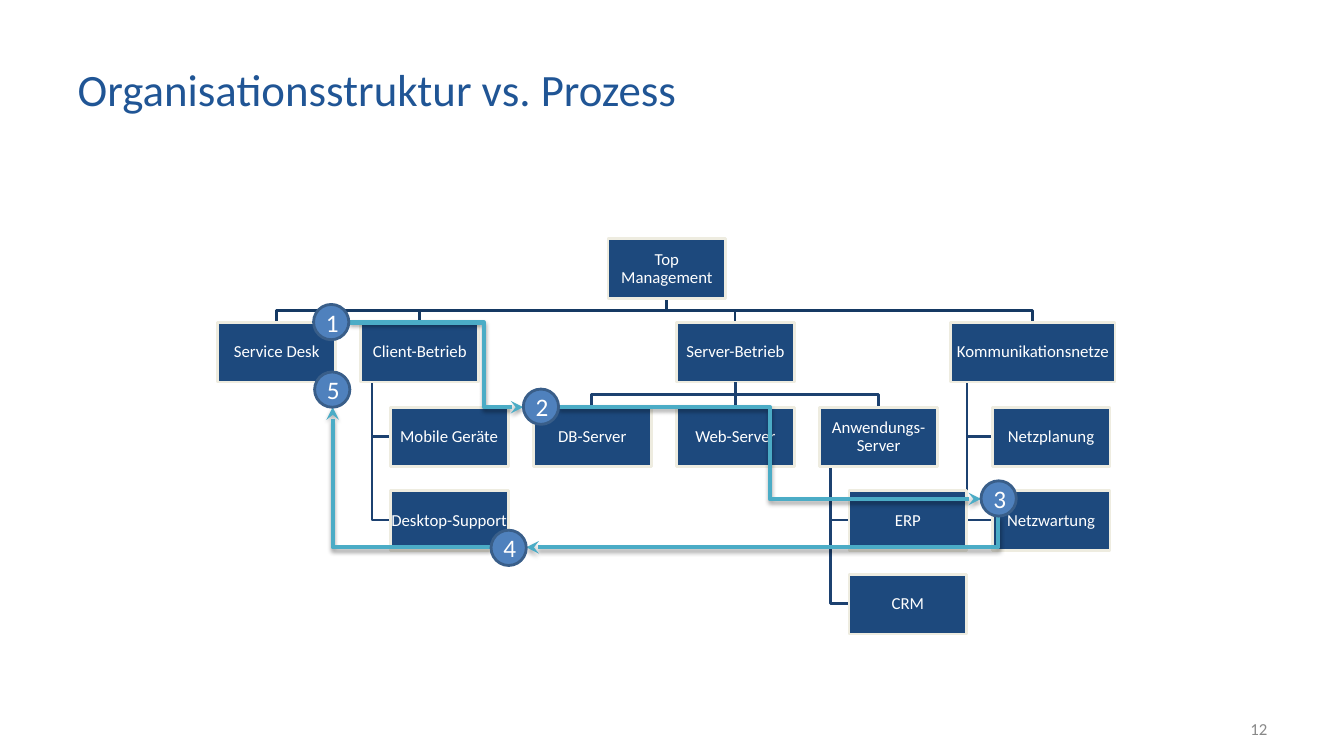
from dataclasses import dataclass

from lxml import etree
from pptx import Presentation
from pptx.dml.color import RGBColor
from pptx.enum.shapes import MSO_CONNECTOR, MSO_SHAPE
from pptx.enum.text import MSO_ANCHOR, MSO_AUTO_SIZE, PP_ALIGN
from pptx.oxml import parse_xml
from pptx.oxml.ns import nsdecls, qn
from pptx.util import Pt

PX = 9144
ELBOW, STRAIGHT = MSO_CONNECTOR.ELBOW, MSO_CONNECTOR.STRAIGHT
RECTANGLE, CIRCLE = MSO_SHAPE.RECTANGLE, MSO_SHAPE.FLOWCHART_CONNECTOR
LEFT, CENTER, RIGHT = PP_ALIGN.LEFT, PP_ALIGN.CENTER, PP_ALIGN.RIGHT
MIDDLE, NO_FIT = MSO_ANCHOR.MIDDLE, MSO_AUTO_SIZE.NONE
BOTTOM_SITE, TOP_SITE = 2, 0

BOX_WIDTH, BOX_HEIGHT, CHART_TOP, DOT = 117, 59, 237, 35

UNITS = {
    "Top Management": (603, 0, None),
    "Service Desk": (216, 1, "Top Management"),
    "Client-Betrieb": (358, 1, "Top Management"),
    "Mobile Geräte": (387, 2, "Client-Betrieb"),
    "Desktop-Support": (387, 3, "Client-Betrieb"),
    "Server-Betrieb": (671, 1, "Top Management"),
    "DB-Server": (529, 2, "Server-Betrieb"),
    "Web-Server": (671, 2, "Server-Betrieb"),
    "Anwendungs-Server": (813, 2, "Server-Betrieb"),
    "ERP": (842, 3, "Anwendungs-Server"),
    "CRM": (842, 4, "Anwendungs-Server"),
    "Kommunikationsnetze": (943, 1, "Top Management"),
    "Netzplanung": (984, 2, "Kommunikationsnetze"),
    "Netzwartung": (984, 3, "Kommunikationsnetze"),
}
WIDE_UNITS = {"Kommunikationsnetze": 163}
SPREADING = ("Top Management", "Server-Betrieb")

STEPS = [(311, 302), (519, 386), (973, 477), (487, 526), (312, 369)]
ARROWS = [
    ((347, 320), (519, 404), 0, 77500),
    ((554, 404), (973, 495), 0, 50000),
    ((990, 512), (522, 543), 90, None),
    ((487, 543), (330, 404), 180, None),
]


@dataclass(frozen=True)
class Theme:
    """Colours, font and type sizes of the slide."""
    font: str = "Calibri"
    title: str = "205595"
    number: str = "888888"
    box: str = "1D497D"
    box_edge: str = "EEECE0"
    top_link: str = "153963"
    link: str = "1C4170"
    dot: str = "4F81BD"
    dot_edge: str = "395E89"
    arrow: str = "4BACC6"
    white: str = "FFFFFF"
    title_size: int = 32
    step_size: int = 18
    small_size: int = 12


class SlideBuilder:
    """Draws styled elements on the current slide."""

    def __init__(self, page, theme):
        self.page = page
        self.theme = theme

    def set_text(self, shape, text, size, color, align, inset=(10, 5), spacing=1.0):
        """Fill a shape with one formatted paragraph."""
        frame = shape.text_frame
        across, down = (value * PX for value in inset)
        settings = {"word_wrap": True, "auto_size": NO_FIT, "vertical_anchor": MIDDLE,
                    "margin_left": across, "margin_right": across,
                    "margin_top": down, "margin_bottom": down}
        for name, value in settings.items():
            setattr(frame, name, value)
        para = frame.paragraphs[0]
        para.alignment, para.line_spacing = align, spacing
        span = para.add_run()
        span.text = text
        for name, value in {"name": self.theme.font, "size": Pt(size)}.items():
            setattr(span.font, name, value)
        span.font.color.rgb = RGBColor.from_string(color)

    def stroke(self, line, color, width):
        """Set the colour and the width in points of a line."""
        line.color.rgb = RGBColor.from_string(color)
        line.width = Pt(width)

    def title(self, text, left, top, width, height):
        """Place and fill the title placeholder."""
        shape = self.page.shapes.title
        place = {"left": left, "top": top, "width": width, "height": height}
        for name, value in place.items():
            setattr(shape, name, value * PX)
        self.set_text(shape, text, self.theme.title_size, self.theme.title, LEFT)

    def label(self, text, left, top, width, height):
        """Add a small right-aligned text box."""
        shape = self.page.shapes.add_textbox(left * PX, top * PX, width * PX, height * PX)
        self.set_text(shape, text, self.theme.small_size, self.theme.number, RIGHT)

    def figure(self, kind, area, fill, edge):
        """Add a filled preset shape with a thin edge."""
        shape = self.page.shapes.add_shape(kind, *(value * PX for value in area))
        shape.shadow.inherit = False
        shape.fill.solid()
        shape.fill.fore_color.rgb = RGBColor.from_string(fill)
        self.stroke(shape.line, edge, 2)
        return shape

    def unit(self, text, area):
        """Add one organisation unit."""
        shape = self.figure(RECTANGLE, area, self.theme.box, self.theme.box_edge)
        self.set_text(shape, text, self.theme.small_size, self.theme.white, CENTER, (1, 1), 0.9)
        return shape

    def step(self, number, left, top):
        """Add one numbered process step."""
        shape = self.figure(CIRCLE, (left, top, DOT, DOT), self.theme.dot, self.theme.dot_edge)
        self.set_text(shape, str(number), self.theme.step_size, self.theme.white, CENTER, (7, 4))

    def branch(self, points, color):
        """Add an open angled line through the points."""
        builder = self.page.shapes.build_freeform(*points[0], scale=PX)
        builder.add_line_segments(points[1:], close=False)
        shape = builder.convert_to_shape()
        shape.shadow.inherit = False
        shape.fill.background()
        self.stroke(shape.line, color, 2)

    def drop(self, upper, lower, color):
        """Join two units with a straight vertical line."""
        line = self.page.shapes.add_connector(STRAIGHT, 0, 0, 0, 0)
        line.begin_connect(upper, BOTTOM_SITE)
        line.end_connect(lower, TOP_SITE)
        self.stroke(line.line, color, 2)
        etree.SubElement(line._element.spPr, qn("a:effectLst"))

    def arrow(self, start, end, turn, bend):
        """Add a shadowed elbow arrow, with one corner if bend is None."""
        middle = [(a + b) * PX // 2 for a, b in zip(start, end)]
        half = [abs(a - b) * PX // 2 for a, b in zip(start, end)]
        if turn == 90:
            half.reverse()
        corners = [middle[0] - half[0], middle[1] - half[1],
                   middle[0] + half[0], middle[1] + half[1]]
        line = self.page.shapes.add_connector(ELBOW, *corners)
        self.stroke(line.line, self.theme.arrow, 3)
        properties = line._element.spPr
        properties.find(qn("a:xfrm")).set("rot", str(turn * 60000))
        geometry = properties.find(qn("a:prstGeom"))
        if bend is None:
            geometry.set("prst", "bentConnector2")
        else:
            etree.SubElement(geometry.find(qn("a:avLst")), qn("a:gd"),
                             name="adj1", fmla=f"val {bend}")
        etree.SubElement(properties.find(qn("a:ln")), qn("a:tailEnd"), type="stealth")
        properties.append(parse_xml(
            f'<a:effectLst {nsdecls("a")}><a:outerShdw blurRad="39370" dist="22860" '
            'dir="5400000" rotWithShape="0"><a:srgbClr val="000000">'
            '<a:alpha val="35000"/></a:srgbClr></a:outerShdw></a:effectLst>'))


def unit_area(name):
    """Return left, top, width and height of a unit."""
    left, level, _ = UNITS[name]
    return (left, CHART_TOP + round(level * 250 / 3),
            WIDE_UNITS.get(name, BOX_WIDTH), BOX_HEIGHT)


def branch_points(parent, child):
    """Return the corners of the line from a parent to its child."""
    left, top, width, height = unit_area(parent)
    child_left, child_top, child_width, child_height = unit_area(child)
    bottom = top + height
    if parent in SPREADING:
        center, child_center = left + width // 2, child_left + child_width // 2
        turn = (bottom + child_top) // 2
        return [(center, bottom), (center, turn), (child_center, turn), (child_center, child_top)]
    spine, child_middle = left + width // 10, child_top + child_height // 2
    return [(spine, bottom), (spine, child_middle), (child_left, child_middle)]


def main():
    """Build the slide and save the deck."""
    deck = Presentation()
    deck.slide_width, deck.slide_height = 1333 * PX, 750 * PX
    theme = Theme()
    builder = SlideBuilder(deck.slides.add_slide(deck.slide_layouts[5]), theme)
    builder.title("Organisationsstruktur vs. Prozess", 67, 30, 991, 115)
    builder.label("12", 956, 703, 311, 40)
    drops = []
    for name, (left, level, parent) in UNITS.items():
        if parent and left == UNITS[parent][0]:
            drops.append((parent, name))
        elif parent:
            color = theme.top_link if level == 1 else theme.link
            builder.branch(branch_points(parent, name), color)
    boxes = {name: builder.unit(name, unit_area(name)) for name in UNITS}
    for parent, name in drops:
        builder.drop(boxes[parent], boxes[name], theme.link)
    for arrow in ARROWS:
        builder.arrow(*arrow)
    for number, position in enumerate(STEPS, 1):
        builder.step(number, *position)
    deck.save("out.pptx")


if __name__ == "__main__":
    main()
